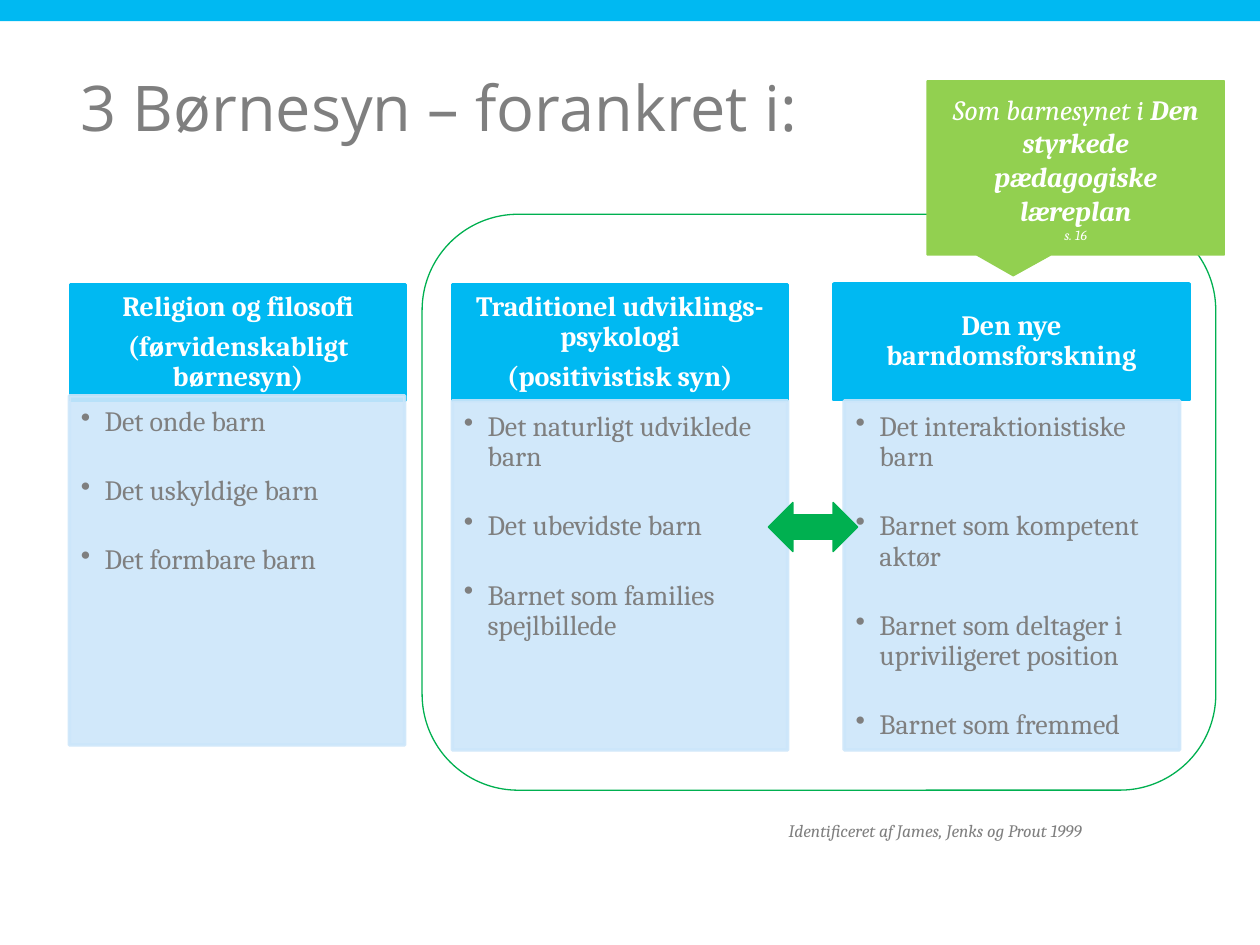
from lxml.etree import SubElement
from pptx import Presentation
from pptx.dml.color import RGBColor
from pptx.enum.shapes import MSO_SHAPE
from pptx.enum.text import MSO_ANCHOR, MSO_AUTO_SIZE, PP_ALIGN
from pptx.oxml.ns import qn
from pptx.util import Cm, Pt

COLORS = {
    "blue": "00B9F2",
    "pale": "CCE6FA",
    "green": "00B050",
    "lime": "92D050",
    "grey": "7F7F7F",
    "white": "FFFFFF",
}
BODY_FONT = "Cambria"
TITLE = "3 Børnesyn – forankret i:"
SOURCE = "Identificeret af James, Jenks og Prout 1999"
CALLOUT = [
    (16, [("Som barnesynet i ", False), ("Den styrkede pædagogiske læreplan", True)]),
    (8, [("s. 16", False)]),
]
HEADER_HEIGHT = 2.34
BODY_SIZE = (6.76, 7.04)
COLUMNS = [
    {
        "header": ["Religion og filosofi", "(førvidenskabligt børnesyn)"],
        "header_at": (1.42, 5.74, 6.76),
        "views": ["Det onde barn", "Det uskyldige barn", "Det formbare barn"],
        "views_at": (1.4, 7.98),
    },
    {
        "header": ["Traditionel udviklings-psykologi", "(positivistisk syn)"],
        "header_at": (9.12, 5.74, 6.76),
        "views": ["Det naturligt udviklede barn", "Det ubevidste barn",
                  "Barnet som families spejlbillede"],
        "views_at": (9.12, 8.08),
    },
    {
        "header": ["Den nye barndomsforskning"],
        "header_at": (16.81, 5.72, 7.16),
        "views": ["Det interaktionistiske barn", "Barnet som kompetent aktør",
                  "Barnet som deltager i upriviligeret position", "Barnet som fremmed"],
        "views_at": (17.02, 8.08),
    },
]


def rgb(name):
    return RGBColor.from_string(COLORS[name])


def set_font(paragraph, size, color, name=BODY_FONT, bold=None, italic=None):
    font = paragraph.font
    font.name, font.size, font.bold, font.italic = name, Pt(size), bold, italic
    font.color.rgb = rgb(color)


def set_frame(frame, insets, anchor=MSO_ANCHOR.TOP):
    frame.word_wrap = True
    frame.auto_size = MSO_AUTO_SIZE.NONE
    frame.vertical_anchor = anchor
    frame.margin_left, frame.margin_top, frame.margin_right, frame.margin_bottom = map(Cm, insets)


def add_block(kind, box, fill, line, line_width=0.75):
    block = slide.shapes.add_shape(kind, *map(Cm, box))
    block.shadow.inherit = False
    if fill:
        block.fill.solid()
        block.fill.fore_color.rgb = rgb(fill)
    else:
        block.fill.background()
    if line:
        block.line.color.rgb = rgb(line)
        block.line.width = Pt(line_width)
    else:
        block.line.fill.background()
    return block


def add_paragraphs(frame, texts):
    for index, text in enumerate(texts):
        paragraph = frame.paragraphs[0] if index == 0 else frame.add_paragraph()
        paragraph.text = text
        yield paragraph


def add_header(texts, left, top, width):
    header = add_block(MSO_SHAPE.RECTANGLE, (left, top, width, HEADER_HEIGHT), "blue", "blue", 2)
    set_frame(header.text_frame, (0.3, 0.18, 0.3, 0.18), MSO_ANCHOR.MIDDLE)
    for paragraph in add_paragraphs(header.text_frame, texts):
        paragraph.alignment = PP_ALIGN.CENTER
        paragraph.line_spacing = 0.9
        paragraph.space_after = Pt(5.6)
        set_font(paragraph, 16, "white", bold=True)


def add_views(texts, left, top):
    views = add_block(MSO_SHAPE.RECTANGLE, (left, top, *BODY_SIZE), "pale", "pale", 2)
    for color in views._element.spPr.iter(qn("a:srgbClr")):
        SubElement(color, qn("a:alpha"), val="90000")
    set_frame(views.text_frame, (0.23, 0.23, 0.3, 0.36))
    for paragraph in add_paragraphs(views.text_frame, texts):
        properties = paragraph._p.get_or_add_pPr()
        properties.set("marL", str(Cm(0.48)))
        properties.set("indent", str(-Cm(0.48)))
        SubElement(properties, qn("a:buChar"), char="•")
        paragraph.alignment = PP_ALIGN.LEFT
        paragraph.line_spacing = 0.9
        paragraph.space_after = Pt(22.3)
        set_font(paragraph, 16, "grey")


presentation = Presentation()
presentation.slide_width, presentation.slide_height = Cm(25.4), Cm(19.05)
slide = presentation.slides.add_slide(presentation.slide_layouts[5])

add_block(MSO_SHAPE.RECTANGLE, (0, 0, 25.4, 0.43), "blue", None)

title = slide.shapes.title
title.left, title.top, title.width, title.height = map(Cm, (1.62, 1.63, 22.38, 1.9))
title.text_frame.text = TITLE
set_frame(title.text_frame, (0, 0, 0, 0))
heading = title.text_frame.paragraphs[0]
heading.alignment = PP_ALIGN.LEFT
heading.line_spacing = 0.83
set_font(heading, 36, "grey", "Open Sans")

for column in COLUMNS:
    add_header(column["header"], *column["header_at"])
    add_views(column["views"], *column["views_at"])

source = slide.shapes.add_textbox(*map(Cm, (15.9, 16.54, 7.19, 0.43)))
set_frame(source.text_frame, (0, 0, 0, 0))
source.text_frame.text = SOURCE
set_font(source.text_frame.paragraphs[0], 10, "grey", italic=True)

add_block(MSO_SHAPE.ROUNDED_RECTANGLE, (8.51, 4.32, 16, 11.61), None, "green")
add_block(MSO_SHAPE.LEFT_RIGHT_ARROW, (15.49, 10.13, 1.8, 0.99), "green", "green")

callout = add_block(MSO_SHAPE.RECTANGULAR_CALLOUT, (18.69, 1.63, 5.99, 3.51), "lime", "lime")
callout.adjustments[0], callout.adjustments[1] = -0.21, 0.62
set_frame(callout.text_frame, (0.25, 0.13, 0.25, 0.13), MSO_ANCHOR.MIDDLE)
for paragraph, (size, runs) in zip(add_paragraphs(callout.text_frame, [""] * len(CALLOUT)), CALLOUT):
    paragraph.alignment = PP_ALIGN.CENTER
    set_font(paragraph, size, "white", italic=True)
    for text, bold in runs:
        run = paragraph.add_run()
        run.text = text
        run.font.bold = bold

presentation.save("out.pptx")
